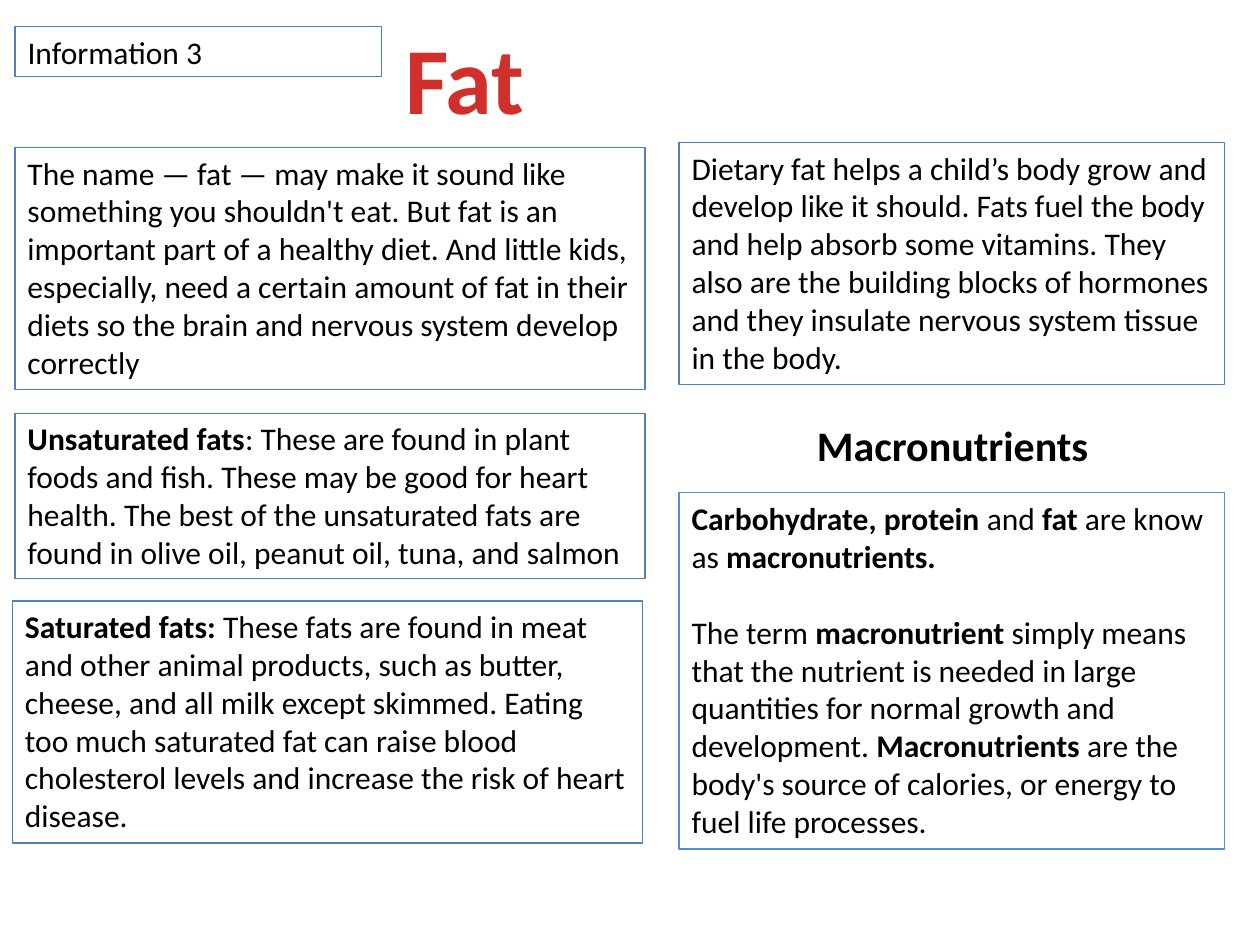
from dataclasses import dataclass

from pptx import Presentation
from pptx.dml.color import RGBColor
from pptx.enum.shapes import MSO_SHAPE
from pptx.enum.text import MSO_ANCHOR, MSO_AUTO_SIZE, PP_ALIGN
from pptx.util import Inches, Pt

RECT = MSO_SHAPE.RECTANGLE
TOP = MSO_ANCHOR.TOP
GROW = MSO_AUTO_SIZE.SHAPE_TO_FIT_TEXT
LEFT, CENTER = PP_ALIGN.LEFT, PP_ALIGN.CENTER


@dataclass(frozen=True)
class Theme:
    font: str = "Calibri"
    text: RGBColor = RGBColor(0x00, 0x00, 0x00)
    title: RGBColor = RGBColor(0xD0, 0x2F, 0x2C)
    border: RGBColor = RGBColor(0x4F, 0x81, 0xBD)
    light_border: RGBColor = RGBColor(0x55, 0x8E, 0xD5)
    body_size: Pt = Pt(18)
    heading_size: Pt = Pt(24)
    title_size: Pt = Pt(54)
    border_width: Pt = Pt(0.75)
    paragraph_gap: Pt = Pt(22)


THEME = Theme()
LEFT_X, LEFT_W = 0.12, 5
RIGHT_X, RIGHT_W = 5.39, 4.33

INTRO = (
    "The name — fat — may make it sound like something you shouldn't eat. "
    "But fat is an important part of a healthy diet. And little kids, especially, "
    "need a certain amount of fat in their diets so the brain and nervous system "
    "develop correctly"
)
UNSATURATED = (
    "**Unsaturated fats**: These are found in plant foods and fish. These may be "
    "good for heart health. The best of the unsaturated fats are found in olive "
    "oil, peanut oil, tuna, and salmon"
)
SATURATED = (
    "**Saturated fats: **These fats are found in meat and other animal products, "
    "such as butter, cheese, and all milk except skimmed. Eating too much saturated "
    "fat can raise blood cholesterol levels and increase the risk of heart disease."
)
DIETARY = (
    "Dietary fat helps a child’s body grow and develop like it should. Fats fuel "
    "the body and help absorb some vitamins. They also are the building blocks of "
    "hormones and they insulate nervous system tissue in the body."
)
MACRO_LIST = "**Carbohydrate, protein** and** fat **are know as **macronutrients.**"
MACRO_MEANING = (
    "The term **macronutrient** simply means that the nutrient is needed in large "
    "quantities for normal growth and development. **Macronutrients** are the "
    "body's source of calories, or energy to fuel life processes."
)

BOXES = [
    (LEFT_X, 0.21, 2.91, 0.4, THEME.border, ["Information 3"]),
    (LEFT_X, 1.17, LEFT_W, 1.92, THEME.border, [INTRO]),
    (LEFT_X, 3.28, LEFT_W, 1.31, THEME.border, [UNSATURATED]),
    (0.1, 4.77, LEFT_W, 1.92, THEME.border, [SATURATED]),
    (RIGHT_X, 1.13, RIGHT_W, 1.92, THEME.border, [DIETARY]),
    (RIGHT_X, 3.91, RIGHT_W, 2.83, THEME.light_border, [MACRO_LIST, MACRO_MEANING]),
]


def style_paragraph(p, size, color, align):
    p.alignment = align
    p.font.name = THEME.font
    p.font.size = size
    p.font.color.rgb = color


def add_marked_runs(p, text):
    for i, part in enumerate(text.split("**")):
        if part:
            r = p.add_run()
            r.text = part
            r.font.bold = i % 2 == 1


def add_box(slide, x, y, w, h, border, paragraphs):
    sp = slide.shapes.add_shape(RECT, Inches(x), Inches(y), Inches(w), Inches(h))
    sp.shadow.inherit = False
    sp.fill.background()
    sp.line.color.rgb = border
    sp.line.width = THEME.border_width
    tf = sp.text_frame
    tf.word_wrap = True
    tf.auto_size = GROW
    tf.vertical_anchor = TOP
    for i, text in enumerate(paragraphs):
        p = tf.add_paragraph() if i else tf.paragraphs[0]
        style_paragraph(p, THEME.body_size, THEME.text, LEFT)
        if i:
            p.space_before = THEME.paragraph_gap
        add_marked_runs(p, text)


def add_heading(slide, x, y, w, h, text, size, color, wrap):
    sp = slide.shapes.add_textbox(Inches(x), Inches(y), Inches(w), Inches(h))
    tf = sp.text_frame
    tf.word_wrap = wrap
    tf.auto_size = GROW
    p = tf.paragraphs[0]
    p.text = text
    style_paragraph(p, size, color, CENTER)
    p.font.bold = True


def main():
    prs = Presentation()
    prs.slide_width = Inches(10)
    prs.slide_height = Inches(7.5)
    slide = prs.slides.add_slide(prs.slide_layouts[6])
    for box in BOXES:
        add_box(slide, *box)
    add_heading(slide, 3.11, 0.11, 1.16, 1.01, "Fat",
                THEME.title_size, THEME.title, False)
    add_heading(slide, 5.55, 3.28, 4.02, 0.5, "Macronutrients",
                THEME.heading_size, THEME.text, True)
    prs.save("out.pptx")


if __name__ == "__main__":
    main()
